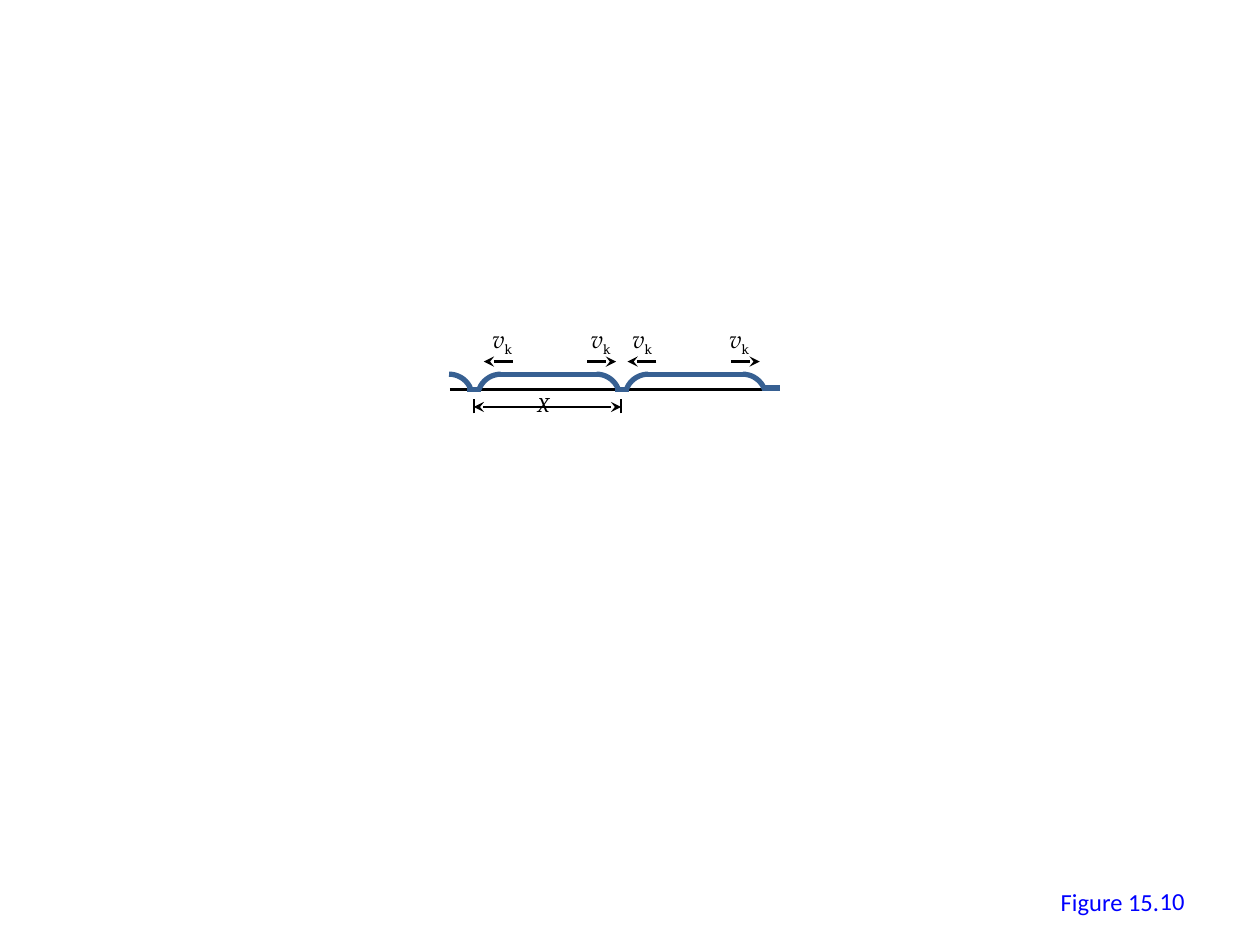
from pptx import Presentation
from pptx.dml.color import RGBColor
from pptx.enum.shapes import MSO_CONNECTOR, MSO_SHAPE
from pptx.enum.text import MSO_ANCHOR, MSO_AUTO_SIZE, PP_ALIGN
from pptx.oxml.ns import qn
from pptx.util import Inches, Pt
from lxml.etree import SubElement

THEME = {
    "ink": RGBColor(0, 0, 0),
    "wave": RGBColor(0x37, 0x60, 0x92),
    "caption": RGBColor(0, 0, 0xFF),
    "thin": 1, "medium": 1.5, "thick": 3,
    "size": 14, "small": 12,
    "sans": "Calibri", "serif": "Cambria", "math": "TeX Gyre Pagella",
}

AXIS = (3.57, 6.16)
AXIS_Y, CREST_Y, ARROW_Y, DIM_Y = 3.09, 2.97, 2.87, 3.23
DIM_ENDS = (3.76, 4.93)
TICK = (3.28, 3.17)
ARC_SIZE, ARC_ADJ = 0.37, (162, 203.898)
FALLING_ARCS = (3.38, 4.55, 5.71)
RISING_ARCS = (4.96, 3.79)
CRESTS = ((4.75, 3.96), (5.14, 5.9))
TROUGHS = ((3.71, 3.82, AXIS_Y), (4.88, 4.99, AXIS_Y), (6.05, 6.19, 3.08))
ARROW_LEN = 0.23
ARROWS = ((4.66, 1), (5.8, 1), (4.07, -1), (5.21, -1))  # start, direction
SPEED_LABELS = (4.59, 4.92, 5.69, 3.81)

prs = Presentation()
prs.slide_width, prs.slide_height = Inches(10), Inches(7.5)
slide = prs.slides.add_slide(prs.slide_layouts[6])
shapes = slide.shapes


def add_line(x1, y1, x2, y2, width, color="ink", ends=()):
    """Draw a line; ends holds headEnd and/or tailEnd to get arrowheads."""
    cx = shapes.add_connector(MSO_CONNECTOR.STRAIGHT,
                              *map(Inches, (x1, y1, x2, y2)))
    cx.line.color.rgb, cx.line.width = THEME[color], Pt(THEME[width])
    ln = cx.line._get_or_add_ln()
    for end in ends:
        SubElement(ln, qn("a:" + end), type="stealth")
    SubElement(cx._element.spPr, qn("a:effectLst"))


def add_arc(x, flipped):
    sp = shapes.add_shape(MSO_SHAPE.ARC, Inches(x), Inches(CREST_Y),
                          Inches(ARC_SIZE), Inches(ARC_SIZE))
    for i, value in enumerate(ARC_ADJ):
        sp.adjustments[i] = value
    if flipped:
        sp._element.spPr.get_or_add_xfrm().set("flipH", "1")
    sp.shadow.inherit = False
    sp.fill.background()
    sp.line.color.rgb, sp.line.width = THEME["wave"], Pt(THEME["thick"])


def add_text(box, runs, color="ink", size="size", wrap=False,
             align=PP_ALIGN.LEFT, anchor=MSO_ANCHOR.TOP):
    """Add a text box; each run is (text, font, italic, baseline percent)."""
    tf = shapes.add_textbox(*map(Inches, box)).text_frame
    frame = {"word_wrap": wrap, "vertical_anchor": anchor,
             "auto_size": (MSO_AUTO_SIZE.NONE if wrap
                           else MSO_AUTO_SIZE.SHAPE_TO_FIT_TEXT)}
    for name, value in frame.items():
        setattr(tf, name, value)
    p = tf.paragraphs[0]
    p.alignment = align
    for text, font, italic, baseline in runs:
        r = p.add_run()
        r.text = text
        fmt = {"name": THEME[font], "size": Pt(THEME[size]), "italic": italic}
        for name, value in fmt.items():
            setattr(r.font, name, value)
        r.font.color.rgb = THEME[color]
        if baseline:
            r._r.get_or_add_rPr().set("baseline", str(baseline * 1000))


add_text((8.32, 6.99, 0.99, 0.34), [("Figure 15.", "sans", False, 0)], "caption")

add_line(AXIS[0], AXIS_Y, AXIS[1], AXIS_Y, "medium")
add_line(DIM_ENDS[0], DIM_Y, DIM_ENDS[1], DIM_Y, "thin",
         ends=("headEnd", "tailEnd"))
for x in DIM_ENDS:
    add_line(x, TICK[0], x, TICK[1], "thin")
add_text((4.17, 3.06, 0.35, 0.3), [("X", "serif", True, 0)], size="small")

for arcs, flipped in ((FALLING_ARCS, False), (RISING_ARCS, True)):
    for x in arcs:
        add_arc(x, flipped)
for x1, x2 in CRESTS:
    add_line(x1, CREST_Y, x2, CREST_Y, "thick", "wave")
for x1, x2, y in TROUGHS:
    add_line(x1, y, x2, y, "thick", "wave")

for x, direction in ARROWS:
    add_line(x, ARROW_Y, x + direction * ARROW_LEN, ARROW_Y, "medium",
             ends=("tailEnd",))
for x in SPEED_LABELS:
    add_text((x, 2.52, 0.41, 0.34),
             [("v", "math", True, 0), ("k", "serif", False, -25)])

add_text((7.17, 6.95, 2.33, 0.4), [("10", "sans", False, 0)], "caption",
         wrap=True, align=PP_ALIGN.RIGHT, anchor=MSO_ANCHOR.MIDDLE)

prs.save("out.pptx")
